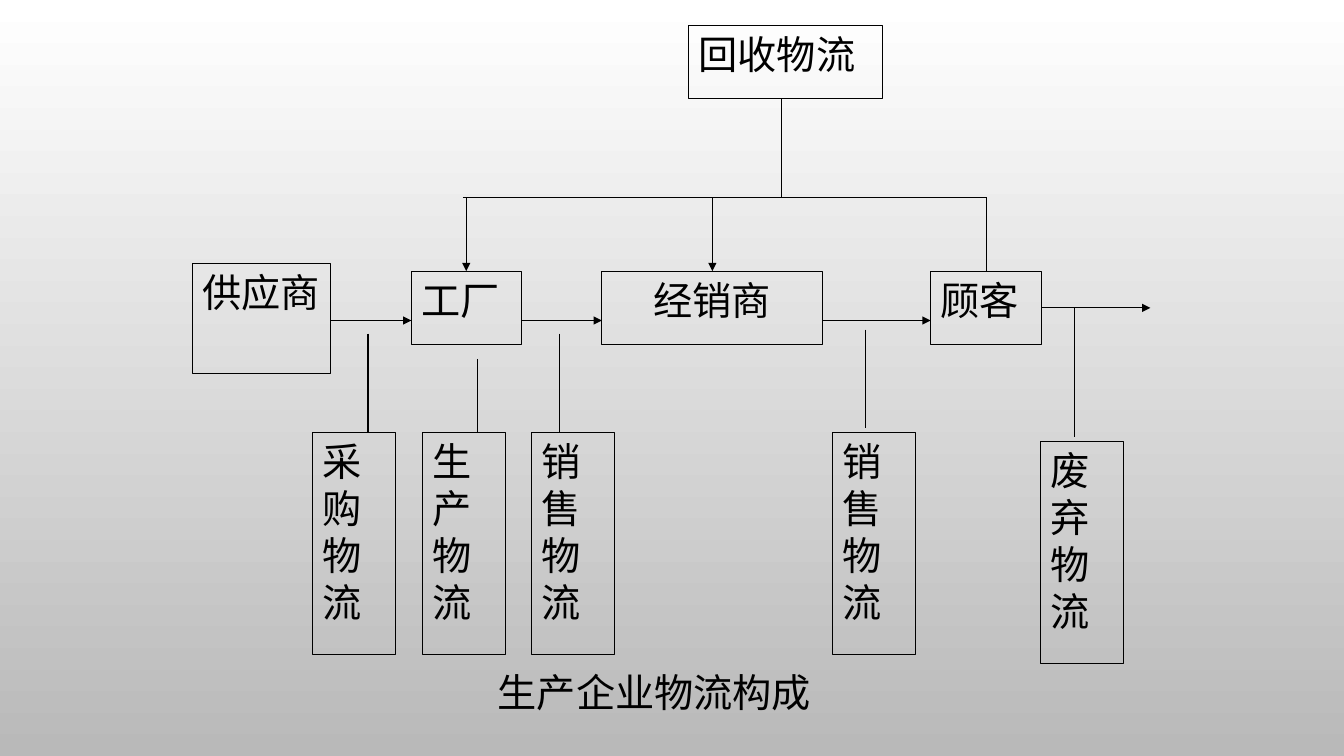
from dataclasses import dataclass

from lxml import etree
from pptx import Presentation
from pptx.dml.color import RGBColor
from pptx.enum.shapes import MSO_CONNECTOR, MSO_SHAPE
from pptx.enum.text import MSO_ANCHOR, MSO_AUTO_SIZE, PP_ALIGN
from pptx.oxml.ns import qn
from pptx.util import Inches, Pt


@dataclass(frozen=True)
class Theme:
    ink: RGBColor = RGBColor(0, 0, 0)
    bg_top: RGBColor = RGBColor(0xFF, 0xFF, 0xFF)
    bg_bottom: RGBColor = RGBColor(0xB9, 0xB9, 0xB9)
    box_font: str = "Times New Roman"
    caption_font: str = "Calibri"
    size: Pt = Pt(28)
    line: Pt = Pt(0.75)


@dataclass(frozen=True)
class Box:
    x: float
    y: float
    w: float
    h: float

    def inches(self):
        return [Inches(v) for v in (self.x, self.y, self.w, self.h)]


THEME = Theme()


def paint_background(s):
    fill = s.background.fill
    fill.gradient()
    fill.gradient_angle = 270
    for stop, color in zip(fill.gradient_stops, (THEME.bg_top, THEME.bg_bottom)):
        stop.color.rgb = color


def set_text(tf, text, font, align):
    tf.text = text
    for p in tf.paragraphs:
        p.alignment = align
        p.font.name = font
        p.font.size = THEME.size
        p.font.color.rgb = THEME.ink


def add_box(s, box, text, align=PP_ALIGN.JUSTIFY):
    sp = s.shapes.add_shape(MSO_SHAPE.FLOWCHART_PROCESS, *box.inches())
    sp.shadow.inherit = False
    sp.fill.background()
    sp.line.color.rgb = THEME.ink
    sp.line.width = THEME.line
    sp.text_frame.word_wrap = True
    sp.text_frame.vertical_anchor = MSO_ANCHOR.TOP
    set_text(sp.text_frame, text, THEME.box_font, align)
    return sp


def add_line(s, x1, y1, x2, y2, arrow=False):
    ends = [Inches(v) for v in (x1, y1, x2, y2)]
    cx = s.shapes.add_connector(MSO_CONNECTOR.STRAIGHT, *ends)
    cx.line.color.rgb = THEME.ink
    cx.line.width = THEME.line
    if arrow:
        ln = cx.line._get_or_add_ln()
        etree.SubElement(ln, qn("a:tailEnd"), type="triangle")
    etree.SubElement(cx._element.spPr, qn("a:effectLst"))
    return cx


def supply_chain(s, box):
    node_y, node_h, arrow_y = box.y + 0.08, 0.73, box.y + 0.57
    supplier = Box(box.x, box.y, 1.37, box.h)
    add_box(s, supplier, "供应商")
    previous_right = supplier.x + supplier.w
    nodes = []
    for text, dx, w, align in (
        ("工厂", 2.17, 1.09, PP_ALIGN.JUSTIFY),
        ("经销商", 4.06, 2.19, PP_ALIGN.CENTER),
        ("顾客", 7.32, 1.1, PP_ALIGN.JUSTIFY),
    ):
        node = Box(box.x + dx, node_y, w, node_h)
        nodes.append(add_box(s, node, text, align))
        add_line(s, previous_right, arrow_y, node.x, arrow_y, arrow=True)
        previous_right = node.x + node.w
    middle = node_y + node_h / 2
    waste = add_line(s, previous_right, middle, box.x + box.w, middle, arrow=True)
    waste.begin_connect(nodes[-1], 3)
    return nodes


def recycling_loop(s, box, nodes):
    bus_y, bottom = box.y + 1.71, box.y + box.h
    source = Box(box.x + 2.24, box.y, 1.92, 0.73)
    add_box(s, source, "回收物流")
    stem_x = box.x + 3.16
    add_line(s, stem_x, source.y + source.h, stem_x, bus_y)
    add_line(s, box.x, bus_y, box.x + box.w, bus_y)
    for node, arrow in zip(nodes, (True, True, False)):
        x = (node.left + node.width / 2) / Inches(1)
        drop = add_line(s, x, bus_y, x, bottom, arrow)
        drop.end_connect(node, 0)


def logistics_labels(s, box):
    for text, dx, dy, tick_dx, tick_top, tick_end in (
        ("采\n购物流", 0, 0, 0.55, -0.98, 0),
        ("生\n产物流", 1.09, 0, 0.55, -0.73, 0),
        ("销\n售物流", 2.17, 0, 0.28, -0.98, 0),
        ("销\n售物流", 5.16, 0, 0.32, -1.02, -0.04),
        ("废弃物流", 7.22, 0.09, 0.34, -1.33, -0.04),
    ):
        label = Box(box.x + dx, box.y + dy, 0.82, 2.2)
        add_box(s, label, text)
        tick_x = label.x + tick_dx
        add_line(s, tick_x, label.y + tick_top, tick_x, label.y + tick_end)


def caption(s, box):
    tf = s.shapes.add_textbox(*box.inches()).text_frame
    tf.word_wrap = False
    tf.auto_size = MSO_AUTO_SIZE.SHAPE_TO_FIT_TEXT
    tf.vertical_anchor = MSO_ANCHOR.MIDDLE
    set_text(tf, "生产企业物流构成", THEME.caption_font, PP_ALIGN.CENTER)


def main():
    prs = Presentation()
    prs.slide_width, prs.slide_height = Inches(13.33), Inches(7.5)
    s = prs.slides.add_slide(prs.slide_layouts[6])
    paint_background(s)
    nodes = supply_chain(s, Box(1.91, 2.61, 9.5, 1.1))
    recycling_loop(s, Box(4.59, 0.25, 5.2, 2.44), nodes)
    logistics_labels(s, Box(3.1, 4.29, 8.04, 2.29))
    caption(s, Box(4.78, 6.58, 3.42, 0.57))
    prs.save("out.pptx")


if __name__ == "__main__":
    main()
